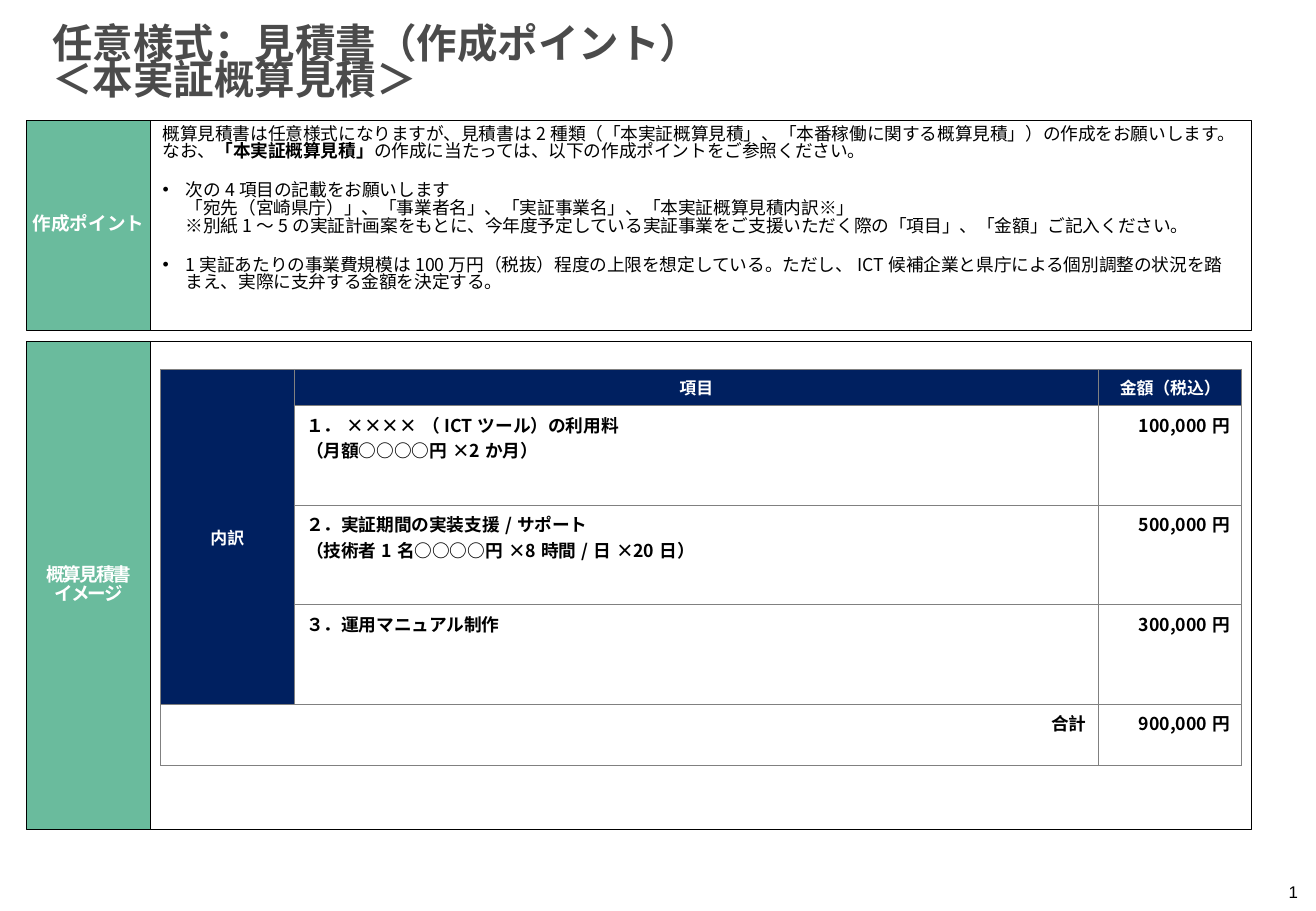
from dataclasses import dataclass
from lxml.etree import SubElement
from pptx import Presentation
from pptx.dml.color import RGBColor
from pptx.enum.shapes import MSO_SHAPE
from pptx.enum.text import MSO_ANCHOR, PP_ALIGN
from pptx.oxml.ns import qn
from pptx.util import Inches, Pt


@dataclass(frozen=True)
class Theme:
    font: str = "Noto Sans CJK JP"
    number_font: str = "Arial"
    ink: str = "000000"
    title_ink: str = "4B4B4B"
    paper: str = "FFFFFF"
    green: str = "45AB85"
    navy: str = "002060"
    grid: str = "808080"
    title: float = 24
    label: float = 11
    body: float = 10.5
    small: float = 10
    rule: float = 0.5


THEME = Theme()
WIDTH, HEIGHT = 10.83, 7.5
TITLE = "任意様式：見積書（作成ポイント）\n＜本実証概算見積＞"
PAGE_NUMBER = "1"
POINTS = [
    ("plain", [("概算見積書は任意様式になりますが、見積書は2種類（「本実証概算見積」、「本番稼働に関する概算見積」）の作成をお願いします。", False)]),
    ("plain", [("なお、", False), ("「本実証概算見積」", True),
               ("の作成に当たっては、以下の作成ポイントをご参照ください。", False)]),
    ("bullet", [("次の4項目の記載をお願いします\v「宛先（宮崎県庁）」、「事業者名」、「実証事業名」、「本実証概算見積内訳※」\v※別紙1～5の実証計画案をもとに、今年度予定している実証事業をご支援いただく際の「項目」、「金額」ご記入ください。", False)]),
    ("bullet", [("1実証あたりの事業費規模は100万円（税抜）程度の上限を想定している。ただし、ICT候補企業と県庁による個別調整の状況を踏まえ、実際に支弁する金額を決定する。", False)]),
]
PANELS = [
    (["作成ポイント"], 0, 1.73, POINTS),
    (["概算見積書", "イメージ"], -120, 4.02, []),
]
HEADER = ["内訳", "項目", "金額（税込）"]
ITEMS = [
    (["１．××××（ICTツール）の利用料", "（月額○○○○円×2か月）"], "100,000円"),
    (["２．実証期間の実装支援/サポート", "（技術者1名○○○○円×8時間/日×20日）"], "500,000円"),
    (["３．運用マニュアル制作"], "300,000円"),
]
TOTAL = ("合計", "900,000円")

LEFT, TOP, GAP = 0.22, 0.99, 0.09
LABEL_WIDTH, BODY_WIDTH = 1.02, 9.06
TABLE_LEFT, TABLE_TOP = 1.32, 3.04
COLUMNS = [1.1, 6.62, 1.18]
ROWS = [0.3] + [0.82] * len(ITEMS) + [0.5]
TIGHT = 0.83


def style(para, size, color, bold=False, align=PP_ALIGN.LEFT, name=THEME.font, tracking=0):
    para.alignment = align
    font = para.font
    font.size, font.bold = Pt(size), bold
    font.color.rgb = RGBColor.from_string(color)
    font.name = name
    SubElement(font._rPr, qn("a:ea")).set("typeface", name)
    if tracking:
        font._rPr.set("spc", str(tracking))


def write(frame, lines, spacing=None, **look):
    for index, line in enumerate(lines):
        para = frame.add_paragraph() if index else frame.paragraphs[0]
        para.text = line
        if spacing:
            para.line_spacing = spacing
        style(para, **look)


def text_box(page, area, text, anchor, spacing=None, **look):
    frame = page.shapes.add_textbox(*map(Inches, area)).text_frame
    frame.word_wrap = True
    frame.vertical_anchor = anchor
    write(frame, [text], spacing, **look)


def panel_box(page, area, color):
    box = page.shapes.add_shape(MSO_SHAPE.RECTANGLE, *map(Inches, area))
    box.shadow.inherit = False
    box.fill.solid()
    box.fill.fore_color.rgb = RGBColor.from_string(color)
    box.line.color.rgb = RGBColor.from_string(THEME.ink)
    box.line.width = Pt(THEME.rule)
    box.text_frame.word_wrap = True
    return box


def write_points(frame, points):
    frame.vertical_anchor = MSO_ANCHOR.TOP
    for index, (kind, spans) in enumerate(points):
        para = frame.add_paragraph() if index else frame.paragraphs[0]
        para.line_spacing = TIGHT
        if kind == "bullet":
            para.space_before = Pt(THEME.body * 1.2)
            properties = para._p.get_or_add_pPr()
            properties.set("marL", str(Inches(0.19)))
            properties.set("indent", str(-Inches(0.19)))
            SubElement(properties, qn("a:buFont")).set("typeface", THEME.number_font)
            SubElement(properties, qn("a:buChar")).set("char", "•")
        style(para, THEME.body, THEME.ink)
        for text, bold in spans:
            for order, piece in enumerate(text.split("\v")):
                if order:
                    para.add_line_break()
                span = para.add_run()
                span.text = piece
                if bold:
                    span.font.bold = True


def add_panels(page):
    top = TOP
    for label, tracking, height, points in PANELS:
        side = panel_box(page, (LEFT, top, LABEL_WIDTH, height), THEME.green)
        tint = side.fill._xPr.find(qn("a:solidFill"))[0]
        SubElement(tint, qn("a:alpha")).set("val", "80000")
        frame = side.text_frame
        frame.vertical_anchor = MSO_ANCHOR.MIDDLE
        frame.margin_left = frame.margin_right = Inches(0.04)
        frame.margin_top = frame.margin_bottom = Inches(0.04)
        write(frame, label, 0.85, size=THEME.label, color=THEME.paper, bold=True,
              align=PP_ALIGN.CENTER, tracking=tracking)
        body = panel_box(page, (LEFT + LABEL_WIDTH, top, BODY_WIDTH, height), THEME.paper)
        if points:
            write_points(body.text_frame, points)
        top += height + GAP


def border(cell):
    properties = cell._tc.get_or_add_tcPr()
    for edge in ("a:lnL", "a:lnR", "a:lnT", "a:lnB"):
        line = SubElement(properties, qn(edge), w=str(Pt(THEME.rule)))
        fill = SubElement(line, qn("a:solidFill"))
        SubElement(fill, qn("a:srgbClr")).set("val", THEME.grid)


def add_estimate(page):
    area = (TABLE_LEFT, TABLE_TOP, sum(COLUMNS), sum(ROWS))
    table = page.shapes.add_table(len(ROWS), len(COLUMNS), *map(Inches, area)).table
    table.first_row = table.horz_banding = False
    for column, width in zip(table.columns, COLUMNS):
        column.width = Inches(width)
    for row, height in zip(table.rows, ROWS):
        row.height = Inches(height)
    last = len(ROWS) - 1
    table.cell(0, 0).merge(table.cell(last - 1, 0))
    table.cell(last, 0).merge(table.cell(last, 1))

    content = {(0, column): [text] for column, text in enumerate(HEADER)}
    for row, (lines, amount) in enumerate(ITEMS, 1):
        content[row, 1], content[row, 2] = lines, [amount]
    content[last, 0], content[last, 2] = [TOTAL[0]], [TOTAL[1]]

    for row in range(len(ROWS)):
        for column in range(len(COLUMNS)):
            cell = table.cell(row, column)
            heading = row == 0 or (column == 0 and row < last)
            border(cell)
            cell.fill.solid()
            cell.fill.fore_color.rgb = RGBColor.from_string(THEME.navy if heading else THEME.paper)
            if (row, column) not in content:
                continue
            if heading:
                cell.vertical_anchor = MSO_ANCHOR.MIDDLE
                look = dict(size=THEME.small, color=THEME.paper, align=PP_ALIGN.CENTER)
            else:
                align = PP_ALIGN.LEFT if column == 1 else PP_ALIGN.RIGHT
                look = dict(size=THEME.body, color=THEME.ink, align=align)
            write(cell.text_frame, content[row, column], bold=True, **look)


def main():
    deck = Presentation()
    deck.slide_width, deck.slide_height = Inches(WIDTH), Inches(HEIGHT)
    page = deck.slides.add_slide(deck.slide_layouts[6])
    text_box(page, (0.33, 0.06, 10.17, 0.83), TITLE, MSO_ANCHOR.BOTTOM, 0.75,
             size=THEME.title, color=THEME.title_ink, bold=True)
    add_panels(page)
    add_estimate(page)
    text_box(page, (10.17, 7.17, 0.61, 0.35), PAGE_NUMBER, MSO_ANCHOR.MIDDLE,
             size=THEME.small, color=THEME.ink, align=PP_ALIGN.RIGHT, name=THEME.number_font)
    deck.save("out.pptx")


if __name__ == "__main__":
    main()
